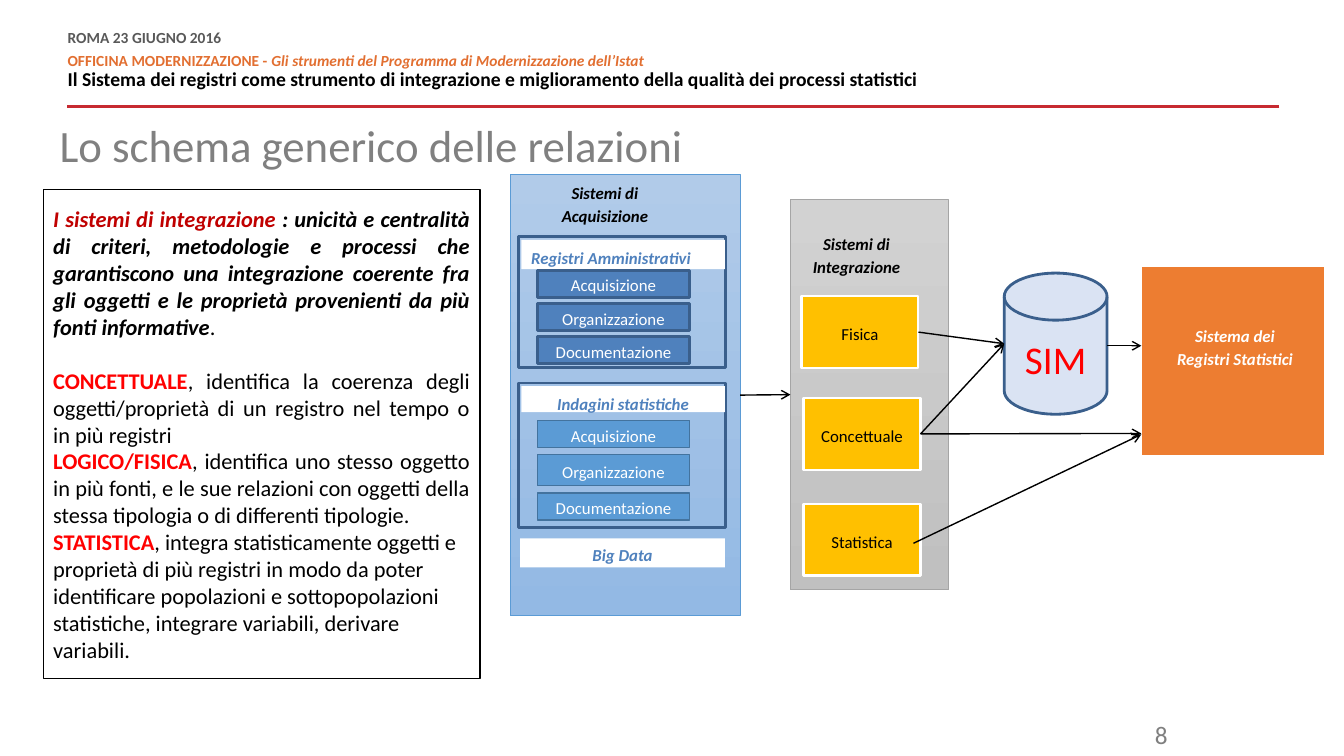
from lxml.etree import SubElement
from pptx import Presentation
from pptx.dml.color import RGBColor
from pptx.enum.shapes import MSO_CONNECTOR, MSO_SHAPE
from pptx.enum.text import MSO_ANCHOR, PP_ALIGN
from pptx.oxml.ns import qn
from pptx.util import Inches, Pt

BLACK = RGBColor(0x00, 0x00, 0x00)
WHITE = RGBColor(0xFF, 0xFF, 0xFF)
GRAY = RGBColor(0x80, 0x80, 0x80)
PAGE_GRAY = RGBColor(0x7F, 0x7F, 0x7F)
DATE_GRAY = RGBColor(0x59, 0x59, 0x59)
HEADER_ORANGE = RGBColor(0xE2, 0x6F, 0x31)
RULE_RED = RGBColor(0xC7, 0x2A, 0x31)
DARK_RED = RGBColor(0xC0, 0x00, 0x00)
RED = RGBColor(0xFF, 0x00, 0x00)
NAVY = RGBColor(0x3A, 0x5F, 0x8C)
BLUE = RGBColor(0x4F, 0x81, 0xBD)
SKY = RGBColor(0x5B, 0x9B, 0xD5)
SKY_EDGE = RGBColor(0x43, 0x73, 0x9E)
PALE_BLUE = RGBColor(0xDA, 0xE3, 0xF3)
YELLOW = RGBColor(0xFF, 0xC0, 0x00)
ORANGE = RGBColor(0xED, 0x7D, 0x31)
SILVER = RGBColor(0xA5, 0xA5, 0xA5)
BLUE_GRADIENT = (RGBColor(0xB1, 0xCB, 0xE9), RGBColor(0x93, 0xB9, 0xE4))
GRAY_GRADIENT = (RGBColor(0xD2, 0xD2, 0xD2), RGBColor(0xC0, 0xC0, 0xC0))

CENTER = {"alignment": PP_ALIGN.CENTER, "line_spacing": 1.15}
STEP = {**CENTER, "space_after": Pt(10)}
JUSTIFY = {"alignment": PP_ALIGN.JUSTIFY}
LEFT = {"alignment": PP_ALIGN.LEFT}
EMPHASIS = {"size": 12, "bold": True, "italic": True}
KEYWORD = {"size": 16, "bold": True, "color": RED}
BODY = {"size": 16, "color": BLACK}
STRONG = {**BODY, "bold": True, "italic": True}
HEADING = {"size": 11, "bold": True, "color": HEADER_ORANGE}

TITLE = [(LEFT | {"line_spacing": 0.9},
          [("Lo schema generico delle relazioni", {"size": 32, "color": GRAY})])]
HEADER = [
    ({"line_spacing": Pt(10.8), "space_after": Pt(6)},
     [("ROMA 23 GIUGNO 2016", {**HEADING, "color": DATE_GRAY})]),
    ({"line_spacing": Pt(10.8)},
     [("OFFICINA MODERNIZZAZIONE - ", HEADING),
      ("Gli strumenti del Programma di Modernizzazione dell’Istat", {**HEADING, "italic": True})]),
    ({"line_spacing": 0.9},
     [("Il Sistema dei registri come strumento di integrazione e miglioramento della qualità "
       "dei processi statistici", {"size": 14, "bold": True, "color": BLACK})]),
]
EXPLANATION = [
    (JUSTIFY,
     [("I sistemi di integrazione ", {**STRONG, "color": DARK_RED}),
      (": unicità e centralità di criteri, metodologie e processi che garantiscono una "
       "integrazione coerente fra gli oggetti e le proprietà provenienti da più fonti "
       "informative", STRONG),
      (".", BODY)]),
    ({**JUSTIFY, "space_before": Pt(19.5)},
     [("CONCETTUALE", KEYWORD),
      (", identifica la coerenza degli oggetti/proprietà di un registro nel tempo o in più "
       "registri", BODY)]),
    (JUSTIFY,
     [("LOGICO/FISICA", KEYWORD),
      (", identifica uno stesso oggetto in più fonti, e le sue relazioni con oggetti della "
       "stessa tipologia o di differenti tipologie.", BODY)]),
    (LEFT,
     [("STATISTICA", KEYWORD),
      (", integra statisticamente oggetti e proprietà di più registri in modo da poter "
       "identificare popolazioni e sottopopolazioni statistiche, integrare variabili, "
       "derivare variabili.", BODY)]),
]
STEPS = ("Acquisizione", "Organizzazione", "Documentazione")
SOURCES = [
    {"name": "Registri Amministrativi", "format": {**LEFT, "line_spacing": 1.15}, "wrap": False,
     "top": 2.35, "height": 1.3, "label_height": 0.29, "fill": BLUE, "line": (NAVY, 2),
     "steps": ((2.68, 0.27), (3.01, 0.27), (3.34, 0.27))},
    {"name": "Indagini statistiche", "format": CENTER, "wrap": True,
     "top": 3.8, "height": 1.43, "label_height": 0.26, "fill": SKY, "line": (SKY_EDGE, 1),
     "steps": ((4.17, 0.27), (4.51, 0.31), (4.89, 0.27))},
]
INTEGRATION = {"Fisica": (7.95, 2.94), "Concettuale": (7.97, 3.95), "Statistica": (7.97, 5)}
CAPTIONS = [
    (("Sistemi di", "Acquisizione"), (5.14, 1.73, 1.72, 0.5), BLACK),
    (("Sistemi di", "Integrazione"), (7.84, 2.24, 1.31, 0.58), BLACK),
    (("Sistema dei", "Registri Statistici"), (11.42, 3.15, 1.66, 0.75), WHITE),
]


def write(shape, paragraphs, anchor=MSO_ANCHOR.TOP, wrap=True, margin=None):
    """Fill a shape with formatted paragraphs."""
    frame = shape.text_frame
    frame.word_wrap = wrap
    frame.vertical_anchor = anchor
    if margin is not None:
        for side in ("left", "top", "right", "bottom"):
            setattr(frame, f"margin_{side}", Inches(margin))
    for index, (formats, runs) in enumerate(paragraphs):
        paragraph = frame.add_paragraph() if index else frame.paragraphs[0]
        for name, value in formats.items():
            setattr(paragraph, name, value)
        for text, style in runs:
            run = paragraph.add_run()
            run.text = text
            values = {"name": "Calibri", "bold": False, "italic": False, **style}
            run.font.color.rgb = values.pop("color")
            values["size"] = Pt(values["size"])
            for name, value in values.items():
                setattr(run.font, name, value)


def add_text(slide, box, paragraphs, **options):
    """Add a text box."""
    write(slide.shapes.add_textbox(*map(Inches, box)), paragraphs, **options)


def add_block(slide, box, fill=None, line=None, paragraphs=(), kind=MSO_SHAPE.RECTANGLE, **options):
    """Add a filled shape with optional outline and text."""
    shape = slide.shapes.add_shape(kind, *map(Inches, box))
    shape.shadow.inherit = False
    if fill is None:
        shape.fill.background()
    elif fill in (BLUE_GRADIENT, GRAY_GRADIENT):
        shape.fill.gradient()
        shape.fill.gradient_angle = 270
        for stop, color in zip(shape.fill.gradient_stops, fill):
            stop.color.rgb = color
    else:
        shape.fill.solid()
        shape.fill.fore_color.rgb = fill
    if line:
        shape.line.color.rgb, shape.line.width = line[0], Pt(line[1])
    else:
        shape.line.fill.background()
    if paragraphs:
        write(shape, paragraphs, **{"anchor": MSO_ANCHOR.MIDDLE, **options})
    return shape


def add_line(slide, start, end, color=BLACK, width=1, arrow=True, begin=None, finish=None):
    """Add a straight line, joined to the given rectangles."""
    connector = slide.shapes.add_connector(MSO_CONNECTOR.STRAIGHT, *map(Inches, start + end))
    connector.line.color.rgb = color
    connector.line.width = Pt(width)
    properties = connector.element.spPr
    if arrow:
        SubElement(properties.find(qn("a:ln")), qn("a:tailEnd"), type="arrow")
    SubElement(properties, qn("a:effectLst"))
    if begin:
        connector.begin_connect(begin, 3)
    if finish:
        connector.end_connect(finish, 1)


def main():
    """Build the slide on the relations between the systems."""
    presentation = Presentation()
    presentation.slide_width, presentation.slide_height = Inches(13.33), Inches(7.5)
    slide = presentation.slides.add_slide(presentation.slide_layouts[5])
    title = slide.shapes.title
    title.left, title.top, title.width, title.height = map(Inches, (0.59, 1.23, 11.7, 0.81))
    write(title, TITLE, margin=0)
    add_line(slide, (12.69, 1.06), (0.66, 1.06), RULE_RED, 2, arrow=False)
    add_text(slide, (0.67, 0.31, 10.02, 0.6), HEADER, margin=0)
    add_text(slide, (10.5, 7.09, 1.18, 0.35),
             [({"alignment": PP_ALIGN.RIGHT}, [("8", {"size": 18, "color": PAGE_GRAY})])])

    label = {**EMPHASIS, "color": BLUE}
    acquisition = add_block(slide, (5.06, 1.73, 2.28, 4.38), BLUE_GRADIENT, (SKY, 0.5))
    for source in SOURCES:
        top = source["top"]
        add_block(slide, (5.14, top, 2.06, source["height"]), line=(NAVY, 2))
        add_block(slide, (5.17, top + 0.03, 2.02, source["label_height"]), WHITE,
                  paragraphs=[(source["format"], [(source["name"], label)])],
                  anchor=MSO_ANCHOR.TOP, wrap=source["wrap"])
        for name, (step_top, height) in zip(STEPS, source["steps"]):
            add_block(slide, (5.33, step_top, 1.51, height), source["fill"], source["line"],
                      [(STEP, [(name, {"size": 12, "color": WHITE})])])
    add_block(slide, (5.16, 5.34, 2.03, 0.29), WHITE, paragraphs=[(CENTER, [("Big Data", label)])])

    integration = add_block(slide, (7.84, 1.98, 1.57, 3.87), GRAY_GRADIENT, (SILVER, 0.5))
    kinds = {name: add_block(slide, place + (1.16, 0.71), YELLOW, (WHITE, 1.5),
                             [(STEP, [(name, {"size": 12, "color": BLACK})])])
             for name, place in INTEGRATION.items()}
    add_block(slide, (11.32, 2.64, 1.82, 1.88), ORANGE, (WHITE, 1.5))
    for lines, box, color in CAPTIONS:
        add_text(slide, box, [(CENTER, [(text, {**EMPHASIS, "color": color})]) for text in lines])
    add_block(slide, (9.96, 2.71, 1.02, 1.4), PALE_BLUE, (NAVY, 2),
              [(CENTER, [("SIM", {"size": 28, "color": RED})])],
              MSO_SHAPE.FLOWCHART_MAGNETIC_DISK)

    add_line(slide, (7.34, 3.92), (7.84, 3.91), begin=acquisition, finish=integration)
    add_line(slide, (9.11, 3.3), (9.96, 3.41), begin=kinds["Fisica"])
    for end in ((9.96, 3.41), (11.32, 4.3)):
        add_line(slide, (9.13, 4.31), end, begin=kinds["Concettuale"])
    add_line(slide, (10.98, 3.43), (11.32, 3.43))
    add_line(slide, (9.06, 5.39), (11.32, 4.31))
    add_block(slide, (0.43, 1.88, 4.33, 4.85), WHITE, (BLACK, 1), EXPLANATION)
    presentation.save("out.pptx")


if __name__ == "__main__":
    main()
